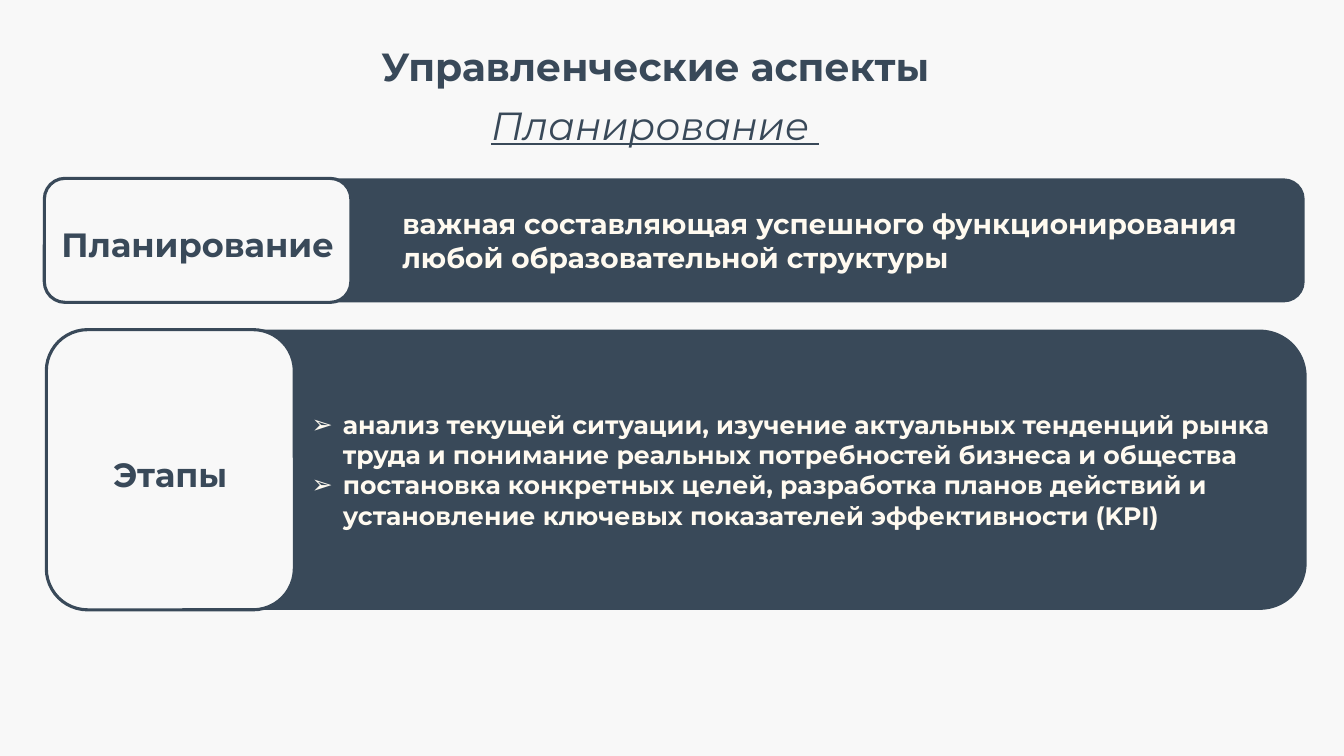
from pptx import Presentation
from pptx.dml.color import RGBColor
from pptx.enum.shapes import MSO_SHAPE as Shape
from pptx.enum.text import MSO_ANCHOR as Anchor, PP_ALIGN as Align
from pptx.oxml.xmlchemy import OxmlElement as Node
from pptx.util import Inches, Pt

NAVY = RGBColor(0x39, 0x49, 0x59)
PALE = RGBColor(0xF8, 0xF8, 0xF8)
CREAM = RGBColor(0xFF, 0xFA, 0xF0)
RIGHT = 12.7


def put_text(shape, lines, look, color, align=Align.LEFT, mark=None):
    frame = shape.text_frame
    form = {"word_wrap": True, "vertical_anchor": Anchor.MIDDLE, "margin_left": 0,
            "margin_right": 0, "margin_top": 0, "margin_bottom": 0}
    for key, value in form.items():
        setattr(frame, key, value)
    frame.text = "\n".join(lines)
    for para in frame.paragraphs:
        para.alignment = align
        font = para.runs[0].font
        for key, value in {"name": "Montserrat", **look}.items():
            setattr(font, key, value)
        font.color.rgb = color
        if mark:
            add_mark(para, mark)


def add_mark(para, mark):
    props = para._p.get_or_add_pPr()
    props.set("marL", str(Inches(0.31)))
    props.set("indent", str(-Inches(0.31)))
    face = Node("a:buFont")
    face.set("typeface", "Arial")
    sign = Node("a:buChar")
    sign.set("char", mark)
    props.extend([face, sign])


def add_box(slide, left, top, width, height):
    return slide.shapes.add_textbox(*map(Inches, (left, top, width, height)))


def add_card(slide, left, top, width, height, fill):
    card = slide.shapes.add_shape(
        Shape.ROUNDED_RECTANGLE, *map(Inches, (left, top, width, height)))
    card.shadow.inherit = False
    card.fill.solid()
    card.fill.fore_color.rgb = fill
    if fill == NAVY:
        card.line.fill.background()
    else:
        card.line.color.rgb = NAVY
        card.line.width = Pt(2.25)


def add_head(slide, left, top, width, height):
    title = slide.shapes.title
    spot = {"left": left, "top": top, "width": width, "height": height}
    for key, value in spot.items():
        setattr(title, key, Inches(value))
    put_text(title, ["Управленческие аспекты"],
             {"size": Pt(28), "bold": True}, NAVY, Align.CENTER)
    sub = add_box(slide, left, top + 0.58, width, height)
    put_text(sub, ["Планирование "],
             {"size": Pt(28), "italic": True, "underline": True}, NAVY, Align.CENTER)


def add_panel(slide, left, top, width, height, tab, label, start, lines, size, mark=None):
    add_card(slide, left, top, width, height, NAVY)
    add_card(slide, left, top, tab, height, PALE)
    name = add_box(slide, left, top + 0.04, tab, height)
    put_text(name, [label], {"size": Pt(24), "bold": True}, NAVY, Align.CENTER)
    body = add_box(slide, start, top, RIGHT - start, height)
    put_text(body, lines, {"size": Pt(size), "bold": True}, CREAM, mark=mark)


def main():
    deck = Presentation()
    deck.slide_width, deck.slide_height = Inches(13.33), Inches(7.5)
    slide = deck.slides.add_slide(deck.slide_layouts[5])
    slide.background.fill.solid()
    slide.background.fill.fore_color.rgb = PALE
    add_head(slide, 0.85, 0.37, 11.3, 0.57)
    add_panel(slide, 0.44, 1.77, 12.5, 1.23, 3.04, "Планирование", 3.99, [
        "важная составляющая успешного функционирования любой образовательной структуры",
    ], 20)
    add_panel(slide, 0.46, 3.27, 12.5, 2.78, 2.46, "Этапы", 3.09, [
        "анализ текущей ситуации, изучение актуальных тенденций рынка труда "
        "и понимание реальных потребностей бизнеса и общества",
        "постановка конкретных целей, разработка планов действий "
        "и установление ключевых показателей эффективности (KPI)",
    ], 18, "➢")
    deck.save("out.pptx")


if __name__ == "__main__":
    main()
